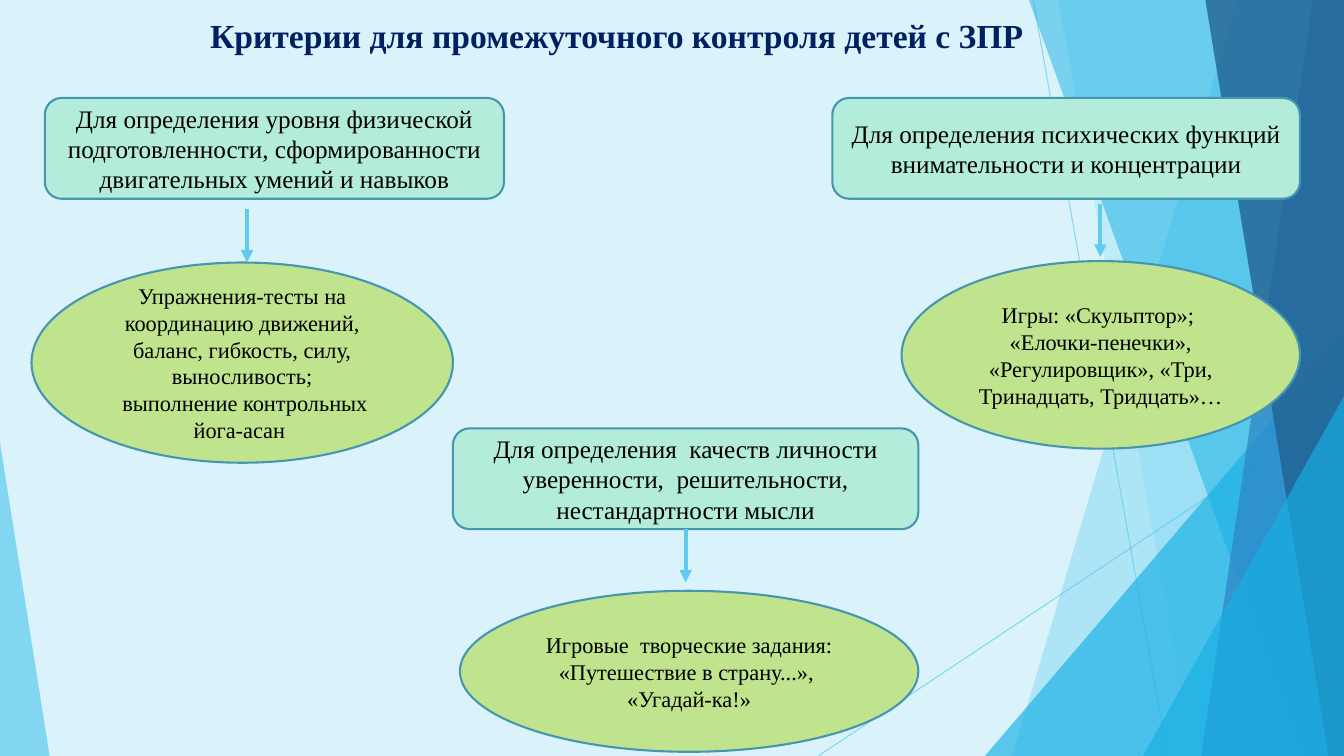
from lxml import etree
from pptx import Presentation
from pptx.dml.color import RGBColor
from pptx.enum import shapes, text
from pptx.oxml.ns import qn
from pptx.util import Pt

WIDTH, HEIGHT = 960, 540
FONT = "Times New Roman"
SKY, AZURE, BLUE, NAVY = "5FCBEF", "17B0E4", "2E83C3", "226292"


def paint(color_format, color, element=None, opacity=100):
    """Set a solid colour; with an element given, also its opacity in percent."""
    color_format.solid()
    color_format.fore_color.rgb = RGBColor.from_string(color)
    if element is not None:
        for node in element.iter(qn("a:srgbClr")):
            etree.SubElement(node, qn("a:alpha"), val=str(opacity * 1000))


def draw_line(slide, start, end, color, width):
    line = slide.shapes.add_connector(
        shapes.MSO_CONNECTOR.STRAIGHT, *[Pt(value) for value in (*start, *end)])
    line.line.width = Pt(width)
    paint(line.line.fill, color)
    etree.SubElement(line.element.spPr, qn("a:effectLst"))
    return line


presentation = Presentation()
presentation.slide_width, presentation.slide_height = Pt(WIDTH), Pt(HEIGHT)
slide = presentation.slides.add_slide(presentation.slide_layouts[5])
paint(slide.background.fill, "DAF3FB")

# Decorative rays and facets
for start, end in [((738, 0), (834, HEIGHT)), ((WIDTH, 290), (584.5, HEIGHT))]:
    ray = draw_line(slide, start, end, SKY, 0.75)
    paint(ray.line.fill, SKY, ray.element, 70)

# A band has its top and bottom x; a triangle has left, top, width and apex
facets = [
    ((884, 723), SKY, 36),
    ((756, 852), SKY, 20),
    ((703.5, 240, 256.5, 1), AZURE, 66),
    ((735, 929.5), AZURE, 50),
    ((938, 858), BLUE, 70),
    ((861, 949), NAVY, 80),
    ((816.5, 283, 143.5, 1), AZURE, 66),
    ((0, 316, 35.5, 0), SKY, 70),
]
for geometry, color, opacity in facets:
    if len(geometry) == 2:
        top_x, bottom_x = geometry
        builder = slide.shapes.build_freeform(top_x, 0, scale=Pt(1))
        builder.add_line_segments([(WIDTH, 0), (WIDTH, HEIGHT), (bottom_x, HEIGHT)])
        facet = builder.convert_to_shape()
    else:
        left, top, width, apex = geometry
        facet = slide.shapes.add_shape(
            shapes.MSO_SHAPE.ISOSCELES_TRIANGLE,
            Pt(left), Pt(top), Pt(width), Pt(HEIGHT - top))
        facet.adjustments[0] = apex
    facet.shadow.inherit = False
    facet.line.fill.background()
    paint(facet.fill, color, facet.element, opacity)

# Title, in front of the facets
title = slide.shapes.title
slide.shapes.element.append(title.element)
title_box = {"left": 119, "top": 7, "width": 643, "height": 45.5}
for name, value in title_box.items():
    setattr(title, name, Pt(value))
title.text_frame.text = "Критерии для промежуточного контроля детей с ЗПР"
title.text_frame.vertical_anchor = text.MSO_ANCHOR.TOP
title_paragraph = title.text_frame.paragraphs[0]
title_paragraph.alignment = text.PP_ALIGN.CENTER
for name, value in {"name": FONT, "size": Pt(24), "bold": True}.items():
    setattr(title_paragraph.font, name, value)
paint(title_paragraph.font.fill, "002060")

# Criteria and the tasks that check them
criterion = (shapes.MSO_SHAPE.ROUNDED_RECTANGLE, "B3ECDA", 18)
task = (shapes.MSO_SHAPE.OVAL, "C0E38D", 16)
boxes = [
    (criterion, (32, 70, 328, 72),
     ["Для определения уровня физической подготовленности, "
      "сформированности двигательных умений и навыков"]),
    (criterion, (594.5, 70, 334, 72),
     ["Для определения психических функций внимательности и концентрации"]),
    (criterion, (323.5, 306, 332.5, 72),
     ["Для определения  качеств личности уверенности,  решительности, "
      "нестандартности мысли"]),
    (task, (22.5, 187.5, 301, 143),
     ["Упражнения-тесты на координацию движений, баланс, гибкость, силу, "
      "выносливость;", " выполнение контрольных йога-асан "]),
    (task, (644, 186.5, 284.5, 134),
     ["Игры: «Скульптор»; ",
      "«Елочки-пенечки», «Регулировщик», «Три, Тринадцать, Тридцать»…"]),
    (task, (328.5, 422, 327.5, 115),
     ["Игровые  творческие задания: «Путешествие в страну...», ",
      "«Угадай-ка!»"]),
]
drawn = []
for (kind, color, size), place, lines in boxes:
    box = slide.shapes.add_shape(kind, *[Pt(value) for value in place])
    box.shadow.inherit = False
    paint(box.fill, color)
    paint(box.line.fill, "4696B1")
    box.line.width = Pt(1.5)
    frame = box.text_frame
    frame.word_wrap = True
    frame.vertical_anchor = text.MSO_ANCHOR.MIDDLE
    frame.text = "\n".join(lines)
    for paragraph in frame.paragraphs:
        paragraph.alignment = text.PP_ALIGN.CENTER
        paragraph.font.name = FONT
        paragraph.font.size = Pt(size)
        paint(paragraph.font.fill, "000000")
    drawn.append(box)

# Arrows from criteria to tasks
for x, y in [(176.5, 149.5), (786, 145.5), (489.75, 378)]:
    arrow = draw_line(slide, (x, y), (x, y + 38), SKY, 3)
    etree.SubElement(arrow.line._get_or_add_ln(), qn("a:tailEnd"), type="triangle")
arrow.begin_connect(drawn[2], 2)

presentation.save("out.pptx")
